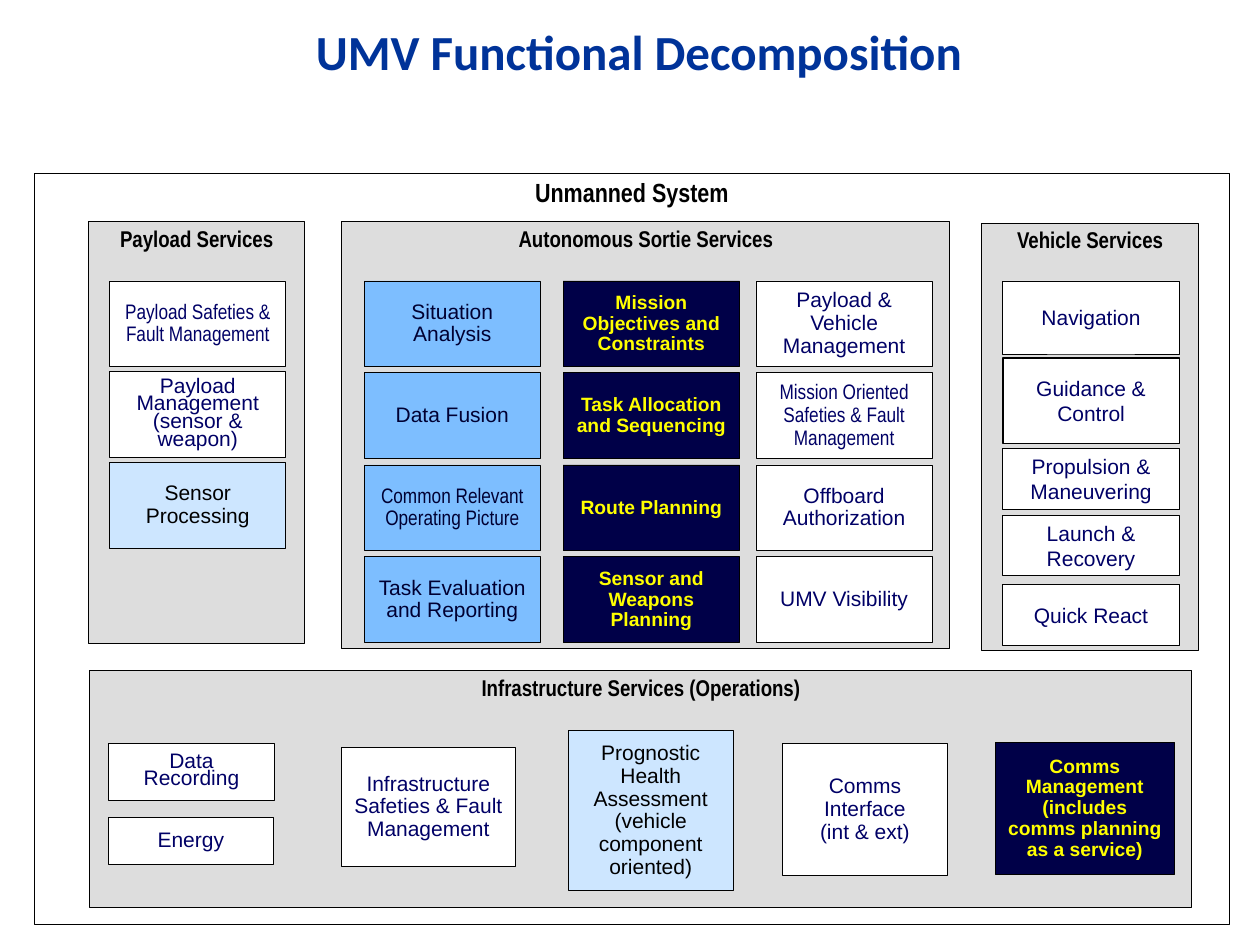
from pptx import Presentation
from pptx.dml.color import RGBColor
from pptx.enum.shapes import MSO_SHAPE
from pptx.enum.text import MSO_ANCHOR, PP_ALIGN
from pptx.util import Inches, Pt

RECTANGLE = MSO_SHAPE.RECTANGLE
TOP, MIDDLE = MSO_ANCHOR.TOP, MSO_ANCHOR.MIDDLE
CENTER = PP_ALIGN.CENTER

# Style: fill, text colour, text size, bold
STYLES = {
    "system": ("FFFFFF", "000000", 15, True),
    "group": ("DDDDDD", "000000", 13, True),
    "plain": ("FFFFFF", "000066", 12, False),
    "pale": ("CDE6FF", "000000", 12, False),
    "blue": ("7DBEFF", "000032", 12, False),
    "navy": ("000048", "FFFF00", 11, True),
}


def color(hex_text):
    return RGBColor.from_string(hex_text)


def add_block(left, top, width, height, text, style, font="Arial", spacing=0.9,
              anchor=MIDDLE, side_inset=0.1, line_width=0.5):
    """Add a bordered rectangle; a newline starts a paragraph, \\v breaks a line."""
    fill, text_color, size, bold = STYLES[style]
    box = page.shapes.add_shape(RECTANGLE, Inches(left), Inches(top),
                                Inches(width), Inches(height))
    box.shadow.inherit = False
    box.fill.solid()
    box.fill.fore_color.rgb = color(fill)
    box.line.color.rgb = color("000000")
    box.line.width = Pt(line_width)
    frame = box.text_frame
    frame.word_wrap = True
    frame.vertical_anchor = anchor
    frame.margin_left = frame.margin_right = Inches(side_inset)
    frame.margin_top = frame.margin_bottom = Inches(0.05)
    frame.text = text
    for para in frame.paragraphs:
        para.alignment = CENTER
        para.line_spacing = spacing
        for span in para.runs:
            span.font.name = font
            span.font.size = Pt(size)
            span.font.bold = bold
            span.font.color.rgb = color(text_color)


deck = Presentation()
deck.slide_width, deck.slide_height = Inches(10), Inches(7.5)
page = deck.slides.add_slide(deck.slide_layouts[5])

title = page.shapes.title
title.left, title.top = Inches(0.57), Inches(0.12)
title.width, title.height = Inches(9), Inches(1.25)
title.text_frame.text = "UMV Functional Decomposition"
title.text_frame.vertical_anchor = TOP
heading = title.text_frame.paragraphs[0]
heading.alignment = CENTER
heading.font.name = "Calibri"
heading.font.size = Pt(28)
heading.font.bold = True
heading.font.color.rgb = color("003399")

# Frames with a heading at the top
for left, top, width, height, text, style in [
    (0.27, 1.38, 9.49, 5.96, "Unmanned System", "system"),
    (0.7, 1.76, 1.72, 3.35, "Payload Services", "group"),
    (2.71, 1.76, 4.83, 3.39, "Autonomous Sortie Services", "group"),
    (7.79, 1.77, 1.72, 3.39, "Vehicle Services", "group"),
    (0.71, 5.32, 8.75, 1.88, "Infrastructure Services (Operations)", "group"),
]:
    add_block(left, top, width, height, text, style, "Arial Narrow", anchor=TOP)

# Service columns: equal cells on a common row pitch
FIRST_ROW, CELL_WIDTH, CELL_HEIGHT = 2.23, 1.4, 0.68
NARROW = {"font": "Arial Narrow"}
columns = [
    (0.87, 0.72, [
        ("Payload Safeties & Fault Management", "plain", NARROW),
        ("Payload Management (sensor &\vweapon)", "plain",
         {"spacing": 0.7, "side_inset": 0}),
        ("Sensor Processing", "pale", {}),
    ]),
    (2.89, 0.73, [
        ("Situation Analysis", "blue", {}),
        ("Data Fusion", "blue", {}),
        ("Common Relevant Operating Picture", "blue",
         {"font": "Arial Narrow", "side_inset": 0}),
        ("Task Evaluation and Reporting", "blue", {}),
    ]),
    (4.47, 0.73, [
        ("Mission Objectives and Constraints", "navy", {}),
        ("Task Allocation and Sequencing", "navy", {}),
        ("Route Planning", "navy", {}),
        ("Sensor and Weapons Planning", "navy", {}),
    ]),
    (6, 0.73, [
        ("Payload & Vehicle Management", "plain", {}),
        ("Mission Oriented Safeties & Fault Management", "plain", NARROW),
        ("Offboard\nAuthorization", "plain", {}),
        ("UMV Visibility", "plain", {}),
    ]),
]
for left, pitch, cells in columns:
    for row, (text, style, options) in enumerate(cells):
        add_block(left, FIRST_ROW + row * pitch, CELL_WIDTH, CELL_HEIGHT,
                  text, style, **options)

# Vehicle column: cells of different heights
for top, height, text, line_width in [
    (2.23, 0.58, "Navigation", 0.5),
    (2.84, 0.68, "Guidance & Control", 0.75),
    (3.56, 0.48, "Propulsion & Maneuvering", 0.5),
    (4.09, 0.48, "Launch & Recovery", 0.5),
    (4.64, 0.48, "Quick React", 0.5),
]:
    add_block(7.96, top, CELL_WIDTH, height, text, "plain",
              spacing=1.0, line_width=line_width)

# Infrastructure services
for left, top, width, height, text, style, spacing in [
    (0.86, 5.9, 1.32, 0.45, "Data Recording", "plain", 0.7),
    (0.86, 6.49, 1.31, 0.37, "Energy", "plain", 0.9),
    (2.71, 5.93, 1.38, 0.95, "Infrastructure Safeties & Fault Management", "plain", 0.9),
    (4.51, 5.8, 1.31, 1.27,
     "Prognostic Health Assessment (vehicle component oriented)", "pale", 0.9),
    (6.21, 5.9, 1.31, 1.05, "Comms Interface\v(int & ext)", "plain", 0.9),
    (7.9, 5.89, 1.42, 1.05,
     "Comms Management\n(includes comms planning as a service)", "navy", 0.9),
]:
    add_block(left, top, width, height, text, style, spacing=spacing)

deck.save("out.pptx")
